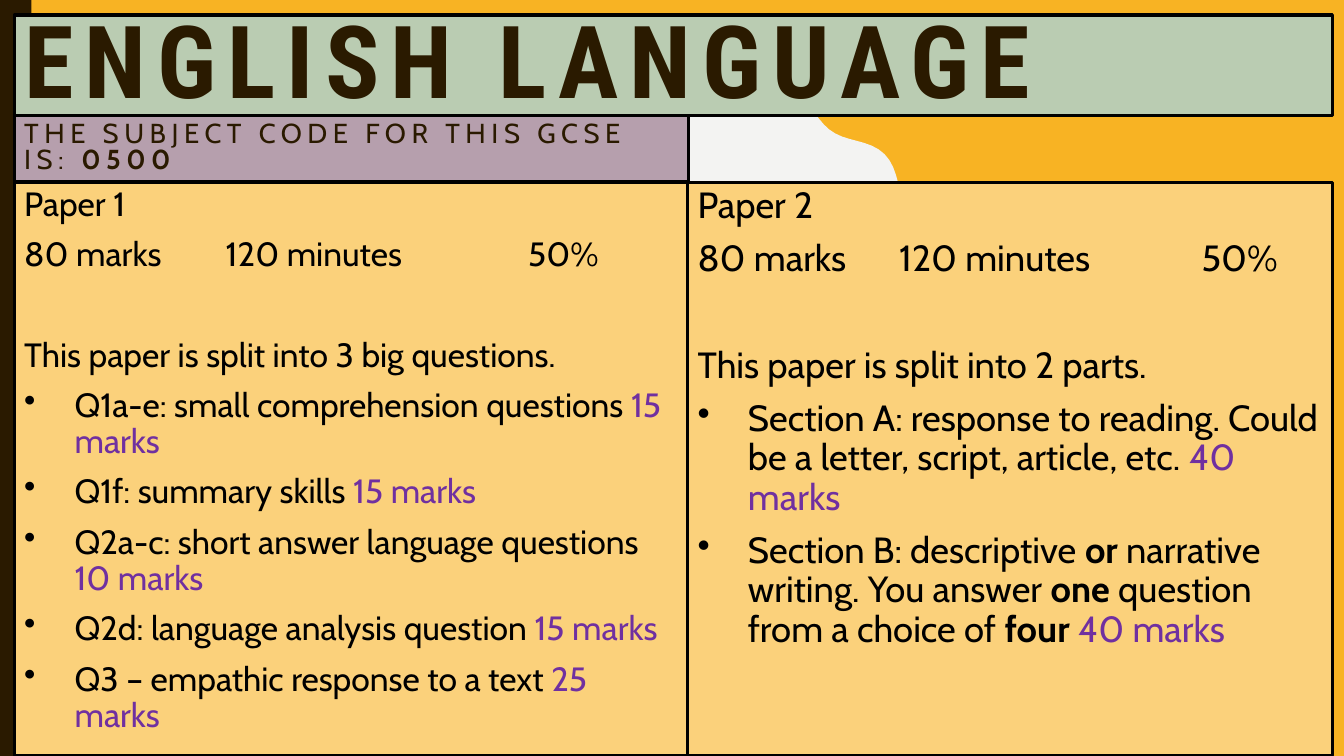
import math
from dataclasses import dataclass

from lxml import etree
from pptx import Presentation, util as u
from pptx.dml.color import RGBColor
from pptx.enum import shapes, text
from pptx.oxml import ns


@dataclass(frozen=True)
class Theme:
    back: str = "F8B323"
    cloud: str = "F3F3F2"
    dark: str = "2A1A00"
    head: str = "BACCB2"
    code: str = "B69FAD"
    panel: str = "FBD17B"
    ink: str = "000000"
    mark: str = "7030A0"
    title: str = "Roboto Condensed"
    body: str = "Cabin"
    big: float = 72
    small: float = 19.6
    left: float = 24
    right: float = 26
    edge: float = 2.25


def apply(item, values):
    for name, value in values.items():
        setattr(item, name, value)


class Deck:
    def __init__(self, theme):
        self.theme = theme
        self.show = Presentation()
        apply(self.show, {"slide_width": u.Cm(33.87), "slide_height": u.Cm(19.05)})
        self.slide = self.show.slides.add_slide(self.show.slide_layouts[6])
        self.paint(self.slide.background.fill, theme.back)

    def paint(self, fill, color):
        fill.solid()
        fill.fore_color.rgb = RGBColor.from_string(color)

    def dress(self, shape, color, edge=False):
        shape.shadow.inherit = False
        self.paint(shape.fill, color)
        if edge:
            self.paint(shape.line.fill, self.theme.ink)
            shape.line.width = u.Pt(self.theme.edge)
        else:
            shape.line.fill.background()

    def box(self, place, color, edge=True):
        kind = shapes.MSO_SHAPE.RECTANGLE
        shape = self.slide.shapes.add_shape(kind, *map(u.Cm, place))
        self.dress(shape, color, edge)
        return shape

    def cloud(self, x, y, size, wave, lobes, color, count=240):
        points = []
        for step in range(count):
            turn = math.tau * step / count
            reach = size + wave * math.cos(lobes * turn)
            points.append((u.Cm(x + reach * math.sin(turn)),
                           u.Cm(y - reach * math.cos(turn))))
        outline = self.slide.shapes.build_freeform(*points[0])
        outline.add_line_segments(points[1:])
        self.dress(outline.convert_to_shape(), color)

    def frame(self, shape, anchor):
        frame = shape.text_frame
        apply(frame, {"word_wrap": True, "vertical_anchor": anchor})
        return frame

    def line(self, para, runs, font, size, color, gap=0, lead=0.9, track=0):
        apply(para, {"alignment": text.PP_ALIGN.LEFT, "line_spacing": lead,
                     "space_before": u.Pt(gap)})
        for words, style in runs:
            run = para.add_run()
            run.text = words
            apply(run.font, {"name": font, "size": u.Pt(size), "bold": style == "bold"})
            tint = self.theme.mark if style == "mark" else color
            run.font.color.rgb = RGBColor.from_string(tint)
            if track:
                run.font._element.set("spc", str(track * 100))

    def label(self, place, fill, runs, **style):
        frame = self.frame(self.box(place, fill), text.MSO_ANCHOR.MIDDLE)
        self.line(frame.paragraphs[0], runs, color=self.theme.dark, **style)

    def bullet(self, para):
        props = para._p.get_or_add_pPr()
        indent = u.Cm(1.27)
        props.set("marL", str(indent))
        props.set("indent", str(-indent))
        etree.SubElement(props, ns.qn("a:buChar"), char="•")

    def stops(self, para, places):
        tabs = etree.SubElement(para._p.get_or_add_pPr(), ns.qn("a:tabLst"))
        for place in places:
            etree.SubElement(tabs, ns.qn("a:tab"), pos=str(u.Cm(place)), algn="l")

    def paper(self, place, size, name, split, items):
        frame = self.frame(self.box(place, self.theme.panel), text.MSO_ANCHOR.TOP)
        facts = "80 marks\t120 minutes\t50%"
        rows = [[(line, "")] for line in (name, facts, split)] + items
        for index, runs in enumerate(rows):
            para = frame.paragraphs[0] if index == 0 else frame.add_paragraph()
            gap = 22 + size if index == 2 else 10
            self.line(para, runs, self.theme.body, size, self.theme.ink, gap)
            if index == 1:
                self.stops(para, (5.08, 12.7))
            if index > 2:
                self.bullet(para)


def main():
    theme = Theme()
    deck = Deck(theme)
    deck.cloud(17.16, 9.02, 7.06, 0.2, 16, theme.cloud)
    deck.box((0, 0, 0.79, 19.05), theme.dark, edge=False)

    deck.label((0.36, 0.38, 33.22, 2.54), theme.head, [("ENGLISH LANGUAGE", "bold")],
               font=theme.title, size=theme.big, track=8)
    deck.label((0.36, 2.92, 16.99, 1.66), theme.code,
               [("THE SUBJECT CODE FOR THIS GCSE IS: ", ""), ("0500", "bold")],
               font=theme.body, size=theme.small, gap=7, lead=0.8, track=4)

    tasks = [
        ("Q1a-e: small comprehension questions ", 15),
        ("Q1f: summary skills ", 15),
        ("Q2a-c: short answer language questions ", 10),
        ("Q2d: language analysis question ", 15),
        ("Q3 – empathic response to a text ", 25),
    ]
    deck.paper((0.36, 4.59, 16.99, 14.46), theme.left, "Paper 1",
               "This paper is split into 3 big questions.",
               [[(task, ""), (f"{marks} marks", "mark")] for task, marks in tasks])

    parts = [
        [("Section A: response to reading. Could be a letter, script, article, etc. ", ""),
         ("40 marks", "mark")],
        [("Section B: descriptive ", ""), ("or", "bold"),
         (" narrative writing. You answer ", ""), ("one", "bold"),
         (" question from a choice of ", ""), ("four ", "bold"), ("40 marks", "mark")],
    ]
    deck.paper((17.33, 4.59, 16.25, 14.46), theme.right, "Paper 2",
               "This paper is split into 2 parts.", parts)
    deck.show.save("out.pptx")


if __name__ == "__main__":
    main()
